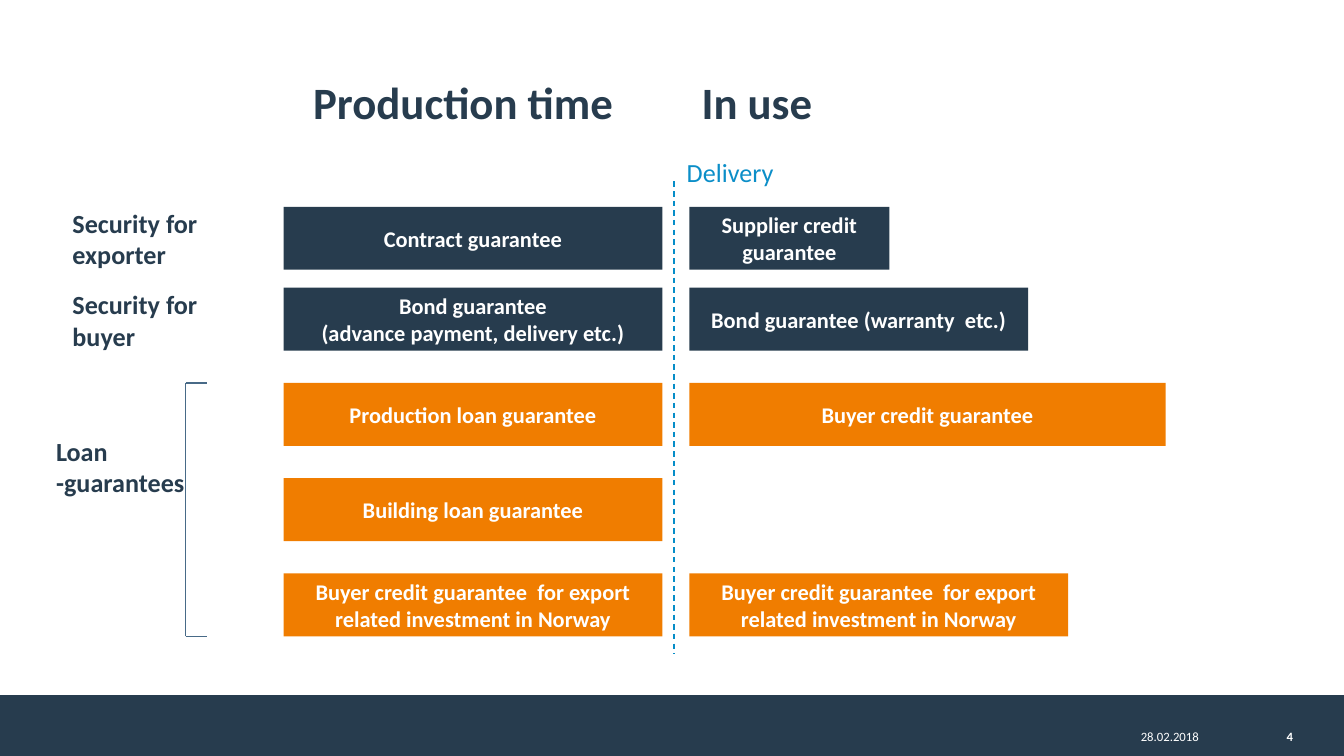
import pptx
import pptx.dml.color
import pptx.enum.dml
import pptx.enum.shapes
import pptx.enum.text
import pptx.oxml.ns
import pptx.util
import lxml.etree

Cm = pptx.util.Cm
Pt = pptx.util.Pt
ALIGN = pptx.enum.text.PP_ALIGN
ANCHOR = pptx.enum.text.MSO_ANCHOR

NAVY = "273C4E"
ORANGE = "F07D00"
WHITE = "FFFFFF"
STEEL = "486A87"


def colour(code):
    return pptx.dml.color.RGBColor.from_string(code)


class Painter:
    font = "Calibri"

    def __init__(self, page):
        self.page = page

    def add_lines(self, frame, lines, size, code, bold, align):
        frame.word_wrap = True
        for index, line in enumerate(lines):
            para = frame.paragraphs[0] if index == 0 else frame.add_paragraph()
            para.alignment = align
            span = para.add_run()
            span.text = line
            span.font.name = self.font
            span.font.size = Pt(size)
            span.font.bold = bold
            span.font.color.rgb = colour(code)

    def text(self, words, left, top, width, height, size, code=NAVY, bold=True,
             align=ALIGN.LEFT, anchor=ANCHOR.TOP, inset=True, grow=False):
        box = self.page.shapes.add_textbox(Cm(left), Cm(top), Cm(width), Cm(height))
        frame = box.text_frame
        if not inset:
            frame.margin_left = frame.margin_right = Cm(0)
            frame.margin_top = frame.margin_bottom = Cm(0)
        if grow:
            frame.auto_size = pptx.enum.text.MSO_AUTO_SIZE.SHAPE_TO_FIT_TEXT
        frame.vertical_anchor = anchor
        self.add_lines(frame, [words], size, code, bold, align)
        return frame.paragraphs[0]

    def bar(self, left, top, width, height, fill, lines=()):
        box = self.page.shapes.add_shape(
            pptx.enum.shapes.MSO_SHAPE.RECTANGLE,
            Cm(left), Cm(top), Cm(width), Cm(height))
        box.shadow.inherit = False
        box.fill.solid()
        box.fill.fore_color.rgb = colour(fill)
        box.line.fill.background()
        box.text_frame.vertical_anchor = ANCHOR.MIDDLE
        self.add_lines(box.text_frame, lines, 12, WHITE, True, ALIGN.CENTER)

    def line(self, x1, y1, x2, y2, code, dashed=False):
        line = self.page.shapes.add_connector(
            pptx.enum.shapes.MSO_CONNECTOR.STRAIGHT, Cm(x1), Cm(y1), Cm(x2), Cm(y2))
        line.line.color.rgb = colour(code)
        line.line.width = Pt(0.75)
        if dashed:
            line.line.dash_style = pptx.enum.dml.MSO_LINE.DASH
        lxml.etree.SubElement(line._element.spPr, pptx.oxml.ns.qn("a:effectLst"))


def main():
    deck = pptx.Presentation()
    deck.slide_width, deck.slide_height = Cm(25.4), Cm(14.29)
    painter = Painter(deck.slides.add_slide(deck.slide_layouts[6]))

    # Footer band with date and page number
    painter.bar(0, 13.14, 25.4, 1.15, NAVY)
    painter.text("28.02.2018", 21.56, 13.77, 1.88, 0.28, 6.8, WHITE,
                 bold=False, inset=False, grow=True)
    painter.text("4", 23.47, 13.77, 0.97, 0.28, 6.8, WHITE,
                 align=ALIGN.RIGHT, inset=False, grow=True)

    # Column headings
    for words, left, width in (("Production time", 5.92, 22.58), ("In use", 13.26, 9.86)):
        painter.text(words, left, 0.94, width, 1.96, 24,
                     anchor=ANCHOR.MIDDLE, inset=False)

    # Delivery divider
    delivery = painter.text("Delivery", 2.51, 3.07, 22.58, 8.76, 14, "0B8EC8",
                            bold=False, align=ALIGN.CENTER, inset=False)
    delivery.line_spacing = 0.8
    painter.line(12.74, 3.43, 12.74, 12.37, "068DC8", dashed=True)

    # Guarantee bars: before and after delivery
    before, after, full, height = 5.36, 13.03, 7.16, 1.19
    loans, step = 7.24, 1.8
    investment = ["Buyer credit guarantee  for export related investment in Norway"]
    rows = [
        (3.91, NAVY, ["Contract guarantee"], ["Supplier credit guarantee"], 3.78),
        (5.44, NAVY, ["Bond guarantee", "(advance payment, delivery etc.)"],
         ["Bond guarantee (warranty  etc.)"], 6.4),
        (loans, ORANGE, ["Production loan guarantee"], ["Buyer credit guarantee"], 9),
        (loans + step, ORANGE, ["Building loan guarantee"], None, 0),
        (loans + 2 * step, ORANGE, investment, investment, full),
    ]
    for top, fill, production, in_use, width in rows:
        painter.bar(before, top, full, height, fill, production)
        if in_use:
            painter.bar(after, top, width, height, fill, in_use)

    # Row labels
    for words, left, top, width in (("Security for exporter", 1.12, 3.79, 3.78),
                                    ("Security for buyer", 1.12, 5.33, 3.78),
                                    ("Loan -guarantees", 0.81, 8.1, 3.4)):
        painter.text(words, left, top, width, 1.45, 14, grow=True)

    # Bracket around the loan guarantees
    spine, tip, bottom = 3.51, 3.91, loans + 2 * step + height
    for y in (loans, bottom):
        painter.line(spine, y, tip, y, STEEL)
    painter.line(spine, bottom, spine, loans, STEEL)

    deck.save("out.pptx")


if __name__ == "__main__":
    main()
